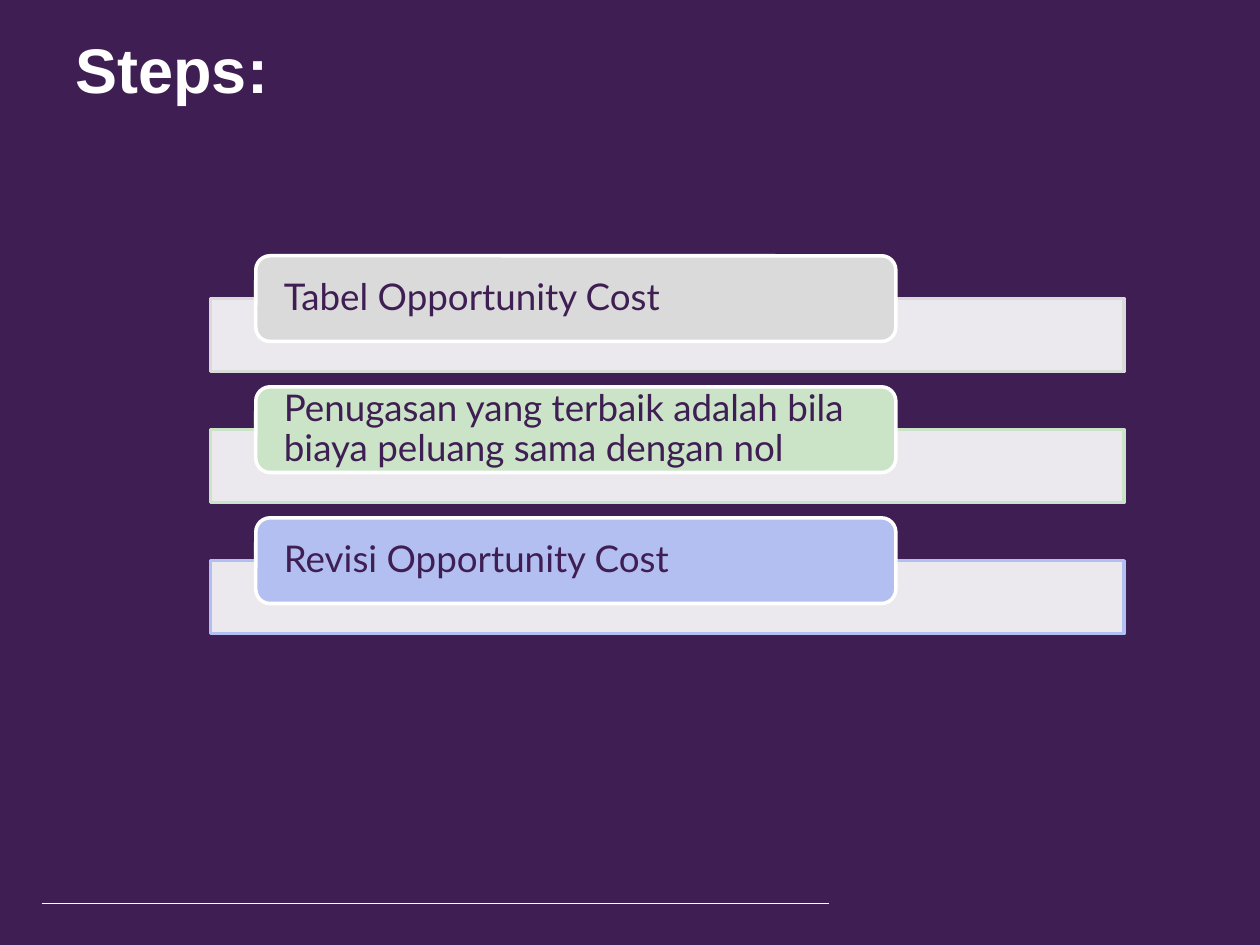
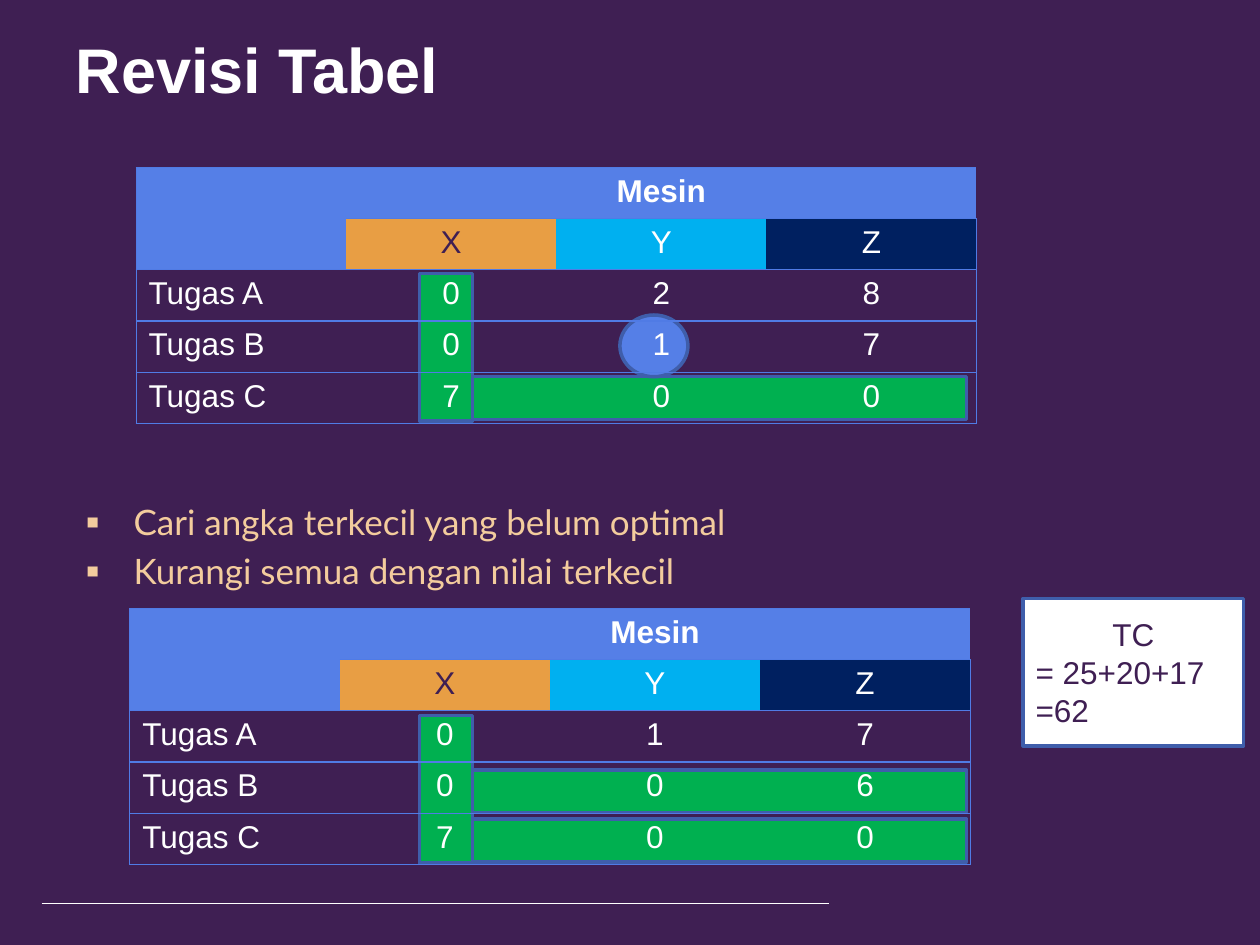
"""Build two slides on revising an opportunity cost table."""
from dataclasses import dataclass

from lxml import etree
from pptx import Presentation
from pptx.dml.color import RGBColor
from pptx.enum.shapes import MSO_CONNECTOR, MSO_SHAPE
from pptx.enum.text import MSO_ANCHOR, MSO_AUTO_SIZE, PP_ALIGN
from pptx.oxml.ns import qn
from pptx.util import Inches, Pt

RECTANGLE, ROUNDED, OVAL = MSO_SHAPE.RECTANGLE, MSO_SHAPE.ROUNDED_RECTANGLE, MSO_SHAPE.OVAL
STRAIGHT = MSO_CONNECTOR.STRAIGHT
MIDDLE, TOP = MSO_ANCHOR.MIDDLE, MSO_ANCHOR.TOP
LEFT, CENTER = PP_ALIGN.LEFT, PP_ALIGN.CENTER
NO_AUTOFIT = MSO_AUTO_SIZE.NONE

COLORS = {
    "purple": "3F1F53", "white": "FFFFFF", "gray": "DADADA", "mint": "CBE4C8",
    "lavender": "B4BFF1", "green": "00B050", "blue": "557FE7", "outline": "3F5EAB",
    "border": "507BE5", "cream": "F3CC9D", "orange": "E89E44", "cyan": "00B0F0",
    "navy": "002060",
}
FORMATS = {
    "title": {"name": "Arial", "size": Pt(36), "bold": True},
    "step": {"name": "Lato", "size": Pt(21), "bold": False},
    "bullet": {"name": "Lato", "size": Pt(20), "bold": False},
    "plain": {"name": "Arial", "size": Pt(18), "bold": False},
    "heading": {"name": "Arial", "size": Pt(18), "bold": True},
}
TABLE_WIDTH, TABLE_HEIGHT = 6.67, 2.03
MACHINES = (("X", "orange", "purple"), ("Y", "cyan", "white"), ("Z", "navy", "white"))


@dataclass(frozen=True)
class Box:
    """Place and look of a preset shape, with lengths in inches."""
    left: float
    top: float
    width: float
    height: float
    fill: str
    line: str = "outline"
    kind: int = RECTANGLE


@dataclass(frozen=True)
class Step:
    """Label and accent colour of one step."""
    label: str
    color: str


@dataclass(frozen=True)
class CostTable:
    """Position and cost rows of one task table."""
    left: float
    top: float
    costs: tuple


STEPS = (
    Step("Tabel Opportunity Cost", "gray"),
    Step("Penugasan yang terbaik adalah bila biaya peluang sama dengan nol", "mint"),
    Step("Revisi Opportunity Cost", "lavender"),
)
COST_TABLES = (
    CostTable(1.08, 1.33, ((0, 2, 8), (0, 1, 7), (7, 0, 0))),
    CostTable(1.03, 4.83, ((0, 1, 7), (0, 0, 6), (7, 0, 0))),
)
COVER_COLUMN_TOPS = (5.68, 2.17)
COVER_ROW_TOPS = (6.5, 6.11, 2.99)
BULLETS = ("Cari angka terkecil yang belum optimal", "Kurangi semua dengan nilai terkecil")


def color(name: str) -> RGBColor:
    """Return the named colour."""
    return RGBColor.from_string(COLORS[name])


def add_element(parent, tag: str, **attributes: str):
    """Append a drawing element and return it."""
    element = etree.SubElement(parent, qn(tag))
    for name, value in attributes.items():
        element.set(name, value)
    return element


def write_paragraph(paragraph, text: str, style: str, color_name: str, alignment=LEFT) -> None:
    """Fill a paragraph with one formatted run."""
    run = paragraph.add_run()
    run.text = text
    for name, value in FORMATS[style].items():
        setattr(run.font, name, value)
    run.font.color.rgb = color(color_name)
    paragraph.alignment = alignment


def place(shape, left: float, top: float, width: float, height: float) -> None:
    """Move and size a shape."""
    lengths = {"left": left, "top": top, "width": width, "height": height}
    for name, value in lengths.items():
        setattr(shape, name, Inches(value))


def add_box(slide, box: Box):
    """Draw a filled and outlined shape."""
    shape = slide.shapes.add_shape(
        box.kind, *map(Inches, (box.left, box.top, box.width, box.height)))
    shape.shadow.inherit = False
    shape.fill.solid()
    shape.fill.fore_color.rgb = color(box.fill)
    shape.line.color.rgb = color(box.line)
    shape.line.width = Pt(2)
    return shape


def start_slide(presentation, layout_index: int, title: str):
    """Add a slide with the shared title and footer line."""
    slide = presentation.slides.add_slide(presentation.slide_layouts[layout_index])
    place(slide.shapes.title, 0.5, 0.29, 7.96, 0.5)
    frame = slide.shapes.title.text_frame
    frame.auto_size = NO_AUTOFIT
    frame.vertical_anchor = MIDDLE
    write_paragraph(frame.paragraphs[0], title, "title", "white")
    footer = slide.shapes.add_connector(
        STRAIGHT, Inches(0.33), Inches(7.17), Inches(6.58), Inches(7.17))
    footer.line.color.rgb = color("white")
    footer.line.width = Pt(0.5)
    add_element(footer._element.spPr, "a:effectLst")
    return slide


def add_step(slide, step: Step, top: float) -> None:
    """Draw a translucent panel with its step label."""
    panel = add_box(slide, Box(1.67, top + 0.34, 7.25, 0.58, "white", step.color))
    fill_color = panel._element.spPr.find(qn("a:solidFill")).find(qn("a:srgbClr"))
    add_element(fill_color, "a:alpha", val="90000")
    label = add_box(slide, Box(2.03, top, 5.08, 0.68, step.color, "white", ROUNDED))
    frame = label.text_frame
    settings = {"word_wrap": True, "vertical_anchor": MIDDLE,
                "margin_left": Inches(0.19), "margin_right": Inches(0.19),
                "margin_top": 0, "margin_bottom": 0}
    for name, value in settings.items():
        setattr(frame, name, value)
    paragraph = frame.paragraphs[0]
    paragraph.line_spacing = 0.9
    write_paragraph(paragraph, step.label, "step", "purple")


def set_borders(cell, is_first: bool, is_last: bool) -> None:
    """Draw horizontal rules and outer side borders on a cell."""
    properties = cell._tc.get_or_add_tcPr()
    edges = {"a:lnL": is_first, "a:lnR": is_last, "a:lnT": True, "a:lnB": True}
    for tag, visible in edges.items():
        line = add_element(properties, tag, w=str(Pt(0.75)))
        if visible:
            fill = add_element(line, "a:solidFill")
            add_element(fill, "a:srgbClr", val=COLORS["border"])
        else:
            add_element(line, "a:noFill")


def write_cell(cell, text: str, fill: str = "", style: str = "plain",
               text_color: str = "white", alignment=CENTER) -> None:
    """Fill a cell with colour and text."""
    if fill:
        cell.fill.solid()
        cell.fill.fore_color.rgb = color(fill)
    else:
        cell.fill.background()
    if text:
        write_paragraph(cell.text_frame.paragraphs[0], text, style, text_color, alignment)


def add_cost_table(slide, cost_table: CostTable) -> None:
    """Draw a table of costs by task and machine."""
    table = slide.shapes.add_table(
        5, 4, Inches(cost_table.left), Inches(cost_table.top),
        Inches(TABLE_WIDTH), Inches(TABLE_HEIGHT)).table
    table.first_row = table.horz_banding = False
    for row in table.rows:
        for index, cell in enumerate(row.cells):
            set_borders(cell, index == 0, index == 3)
    for index in range(4):
        write_cell(table.cell(0, index), "Mesin" if index == 1 else "", "blue", "heading")
    write_cell(table.cell(1, 0), "", "blue")
    table.cell(0, 0).merge(table.cell(1, 0))
    table.cell(0, 1).merge(table.cell(0, 3))
    for column, (machine, fill, text_color) in enumerate(MACHINES, 1):
        write_cell(table.cell(1, column), machine, fill, text_color=text_color)
    for row, (task, costs) in enumerate(zip("ABC", cost_table.costs), 2):
        write_cell(table.cell(row, 0), f"Tugas {task}", alignment=LEFT)
        for column, cost in enumerate(costs, 1):
            write_cell(table.cell(row, column), str(cost))


def fill_bullets(body) -> None:
    """Place the body and write its square bullets."""
    place(body, 0.58, 3.92, 8.92, 3.08)
    frame = body.text_frame
    frame.auto_size = NO_AUTOFIT
    frame.vertical_anchor = TOP
    for index, text in enumerate(BULLETS):
        paragraph = frame.add_paragraph() if index else frame.paragraphs[0]
        properties = paragraph._p.get_or_add_pPr()
        properties.set("marL", str(Inches(0.38)))
        properties.set("indent", str(-Inches(0.38)))
        bullet_color = add_element(properties, "a:buClr")
        add_element(bullet_color, "a:srgbClr", val=COLORS["cream"])
        add_element(properties, "a:buSzPct", val="115000")
        add_element(properties, "a:buFont", typeface="Arial")
        add_element(properties, "a:buChar", char="▪")
        paragraph.space_before = Pt(4 if index else 0)
        write_paragraph(paragraph, text, "bullet", "cream")


def add_total_cost(slide) -> None:
    """Draw the box with the total cost."""
    frame = add_box(slide, Box(8.12, 4.75, 1.75, 1.17, "white")).text_frame
    frame.word_wrap = True
    frame.vertical_anchor = MIDDLE
    lines = (("TC", CENTER), ("= 25+20+17", LEFT), ("=62", LEFT))
    for index, (text, alignment) in enumerate(lines):
        paragraph = frame.add_paragraph() if index else frame.paragraphs[0]
        write_paragraph(paragraph, text, "plain", "purple", alignment)


def build_steps(presentation) -> None:
    """Build the slide that lists the steps."""
    slide = start_slide(presentation, 5, "Steps:")
    for index, step in enumerate(STEPS):
        add_step(slide, step, 2.03 + 1.04 * index)


def build_revision(presentation) -> None:
    """Build the slide with the two cost tables."""
    slide = start_slide(presentation, 1, "Revisi Tabel")
    fill_bullets(slide.placeholders[1])
    for top in COVER_ROW_TOPS:
        add_box(slide, Box(3.75, top, 3.92, 0.34, "green"))
    for top in COVER_COLUMN_TOPS:
        add_box(slide, Box(3.33, top, 0.42, 1.17, "green"))
    add_box(slide, Box(4.92, 2.5, 0.54, 0.49, "blue", kind=OVAL))
    for cost_table in COST_TABLES:
        add_cost_table(slide, cost_table)
    add_total_cost(slide)


def main() -> None:
    """Build and save the presentation."""
    presentation = Presentation()
    presentation.slide_width = Inches(10)
    presentation.slide_height = Inches(7.5)
    background = presentation.slide_master.background.fill
    background.solid()
    background.fore_color.rgb = color("purple")
    build_steps(presentation)
    build_revision(presentation)
    presentation.save("out.pptx")


if __name__ == "__main__":
    main()
